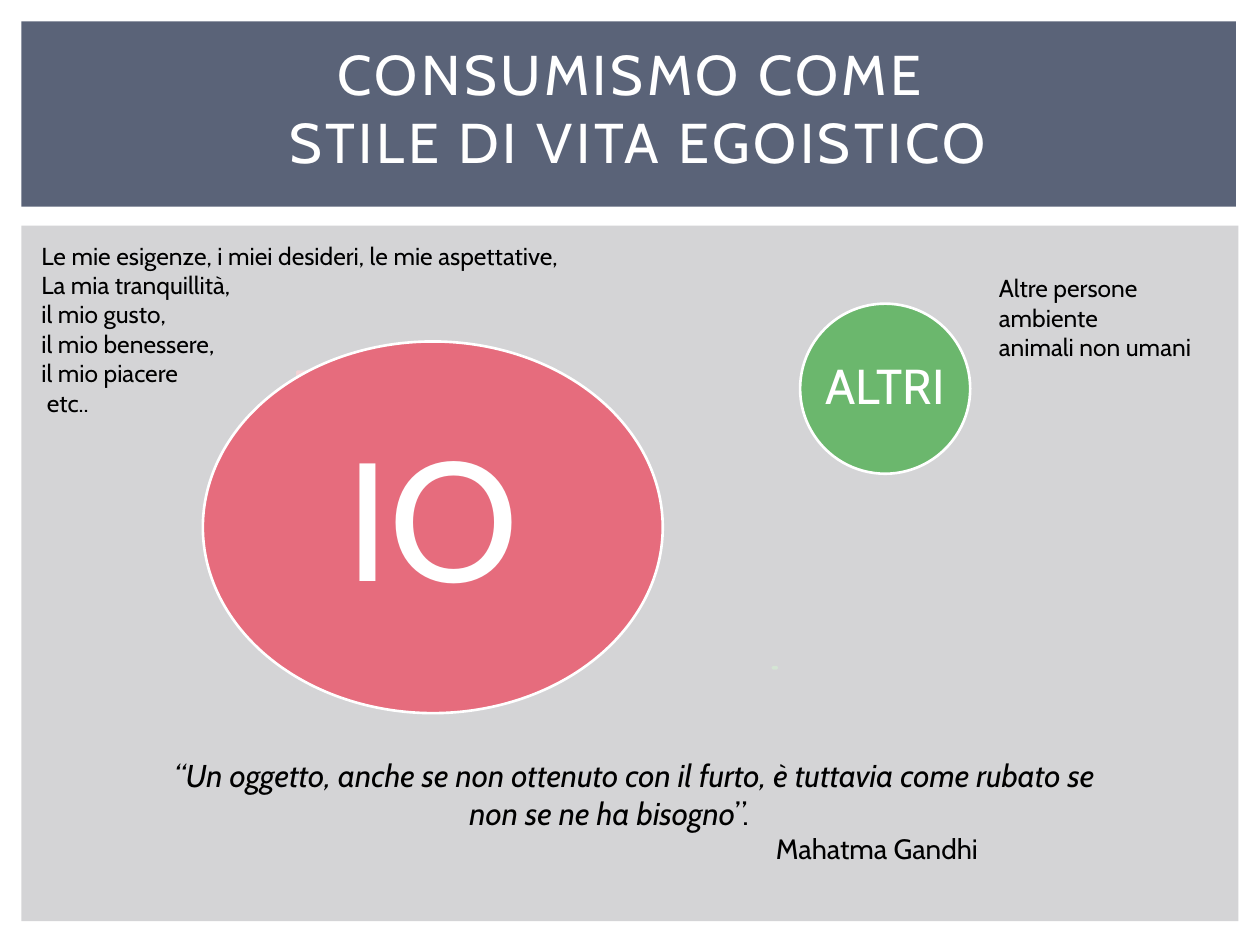
"""Build the slide on consumerism as a selfish way of life."""
from dataclasses import dataclass
from typing import Any

import lxml.etree
import pptx
import pptx.dml.color
import pptx.enum.shapes
import pptx.enum.text
import pptx.oxml.ns
import pptx.util

Inches = pptx.util.Inches
Kind = pptx.enum.shapes.MSO_SHAPE
Align = pptx.enum.text.PP_ALIGN
Anchor = pptx.enum.text.MSO_ANCHOR


@dataclass(frozen=True)
class Theme:
    """Colours, type sizes and the font of the slide."""
    font: str = "Cabin"
    white: str = "FFFFFF"
    black: str = "000000"
    panel: str = "D4D4D6"
    band: str = "5A6378"
    red: str = "E66C7D"
    pale_red: str = "F5D4D7"
    green: str = "6BB76D"
    pale_green: str = "D4E6D4"
    title: int = 32
    self_label: int = 96
    others_label: int = 28
    quote: int = 18
    author: int = 16
    note: int = 14
    outline: float = 1.5


@dataclass(frozen=True)
class Box:
    """A rectangle on the page in inches."""
    left: float
    top: float
    width: float
    height: float

    def lengths(self) -> list[int]:
        """Return the four lengths for a shape call."""
        return [Inches(n) for n in (self.left, self.top, self.width, self.height)]


@dataclass(frozen=True)
class Figure:
    """A filled shape with an optional outline and label."""
    kind: Any
    box: Box
    fill: str
    line: str = ""
    label: str = ""
    size: int = 0
    opacity: int = 100


@dataclass(frozen=True)
class Note:
    """A block of short left-aligned lines."""
    box: Box
    lines: tuple[str, ...]


THEME = Theme()
PANELS = (
    Figure(Kind.RECTANGLE, Box(0.17, 1.79, 9.66, 5.52), THEME.panel),
    Figure(Kind.RECTANGLE, Box(0.17, 0.17, 9.64, 1.47), THEME.band),
)
FIGURES = (
    Figure(Kind.RECTANGLE, Box(2.36, 2.95, 2.02, 1.35), THEME.pale_red,
           THEME.pale_red, opacity=90),
    Figure(Kind.OVAL, Box(1.61, 2.71, 3.65, 2.95), THEME.red, THEME.white,
           "IO", THEME.self_label),
    Figure(Kind.MATH_MINUS, Box(6.13, 5.28, 0.04, 0.04), THEME.pale_green,
           THEME.pale_green, opacity=90),
    Figure(Kind.OVAL, Box(6.35, 2.41, 1.35, 1.35), THEME.green, THEME.white,
           "ALTRI", THEME.others_label),
)
NOTES = (
    Note(Box(0.23, 1.86, 4.41, 1.75),
         ("Le mie esigenze, i miei desideri, le mie aspettative,",
          "La mia tranquillità,", "il mio gusto,", "il mio benessere,",
          "il mio piacere", " etc..")),
    Note(Box(7.83, 2.12, 2, 0.81),
         ("Altre persone", "ambiente", "animali non umani")),
)


def apply(target: Any, values: dict[str, Any]) -> None:
    """Set each named attribute on the target."""
    for name, value in values.items():
        setattr(target, name, value)


def add_span(para: Any, text: str, size: int, color: str = THEME.black,
             **extra: Any) -> Any:
    """Add a formatted run to a paragraph."""
    span = para.add_run()
    span.text = text
    apply(span.font, {"name": THEME.font, "size": pptx.util.Pt(size), **extra})
    span.font.color.rgb = pptx.dml.color.RGBColor.from_string(color)
    return span


def add_paras(frame: Any, count: int) -> list[Any]:
    """Return the given number of paragraphs of an empty frame."""
    return [frame.paragraphs[0], *(frame.add_paragraph() for _ in range(count - 1))]


def add_figure(page: Any, figure: Figure) -> Any:
    """Draw one figure with its label."""
    shape = page.shapes.add_shape(figure.kind, *figure.box.lengths())
    shape.shadow.inherit = False
    shape.fill.solid()
    shape.fill.fore_color.rgb = pptx.dml.color.RGBColor.from_string(figure.fill)
    if figure.line:
        shape.line.width = pptx.util.Pt(THEME.outline)
        shape.line.color.rgb = pptx.dml.color.RGBColor.from_string(figure.line)
    else:
        shape.line.fill.background()
    if figure.opacity < 100:
        for color in shape.element.spPr.iter(pptx.oxml.ns.qn("a:srgbClr")):
            alpha = lxml.etree.SubElement(color, pptx.oxml.ns.qn("a:alpha"))
            alpha.set("val", str(figure.opacity * 1000))
    if figure.label:
        frame = shape.text_frame
        apply(frame, {"word_wrap": False, "vertical_anchor": Anchor.MIDDLE,
                      "margin_left": 0, "margin_right": 0,
                      "margin_top": 0, "margin_bottom": 0})
        para = frame.paragraphs[0]
        apply(para, {"alignment": Align.CENTER, "line_spacing": 0.9})
        add_span(para, figure.label, figure.size, THEME.white)
    return shape


def add_text_box(page: Any, box: Box) -> Any:
    """Add a wrapping text box and return its frame."""
    frame = page.shapes.add_textbox(*box.lengths()).text_frame
    frame.word_wrap = True
    return frame


def add_note(page: Any, note: Note) -> None:
    """Write one block of lines."""
    frame = add_text_box(page, note.box)
    for para, line in zip(add_paras(frame, len(note.lines)), note.lines):
        add_span(para, line, THEME.note)


def add_title(page: Any, lines: tuple[str, ...]) -> None:
    """Fill the title placeholder with letter-spaced lines."""
    title = page.shapes.title
    left, top, width, height = Box(0, 0, 10, 1.7).lengths()
    apply(title, {"left": left, "top": top, "width": width, "height": height})
    frame = title.text_frame
    apply(frame, {"vertical_anchor": Anchor.MIDDLE,
                  "auto_size": pptx.enum.text.MSO_AUTO_SIZE.NONE})
    for para, line in zip(add_paras(frame, len(lines)), lines):
        para.alignment = Align.CENTER
        span = add_span(para, line, THEME.title, THEME.white)
        span.font._element.set("spc", "200")


def add_quote(page: Any) -> None:
    """Write the quotation and its author."""
    frame = add_text_box(page, Box(0.23, 5.95, 9.61, 1.01))
    first, second, author = add_paras(frame, 3)
    for para in (first, second):
        para.alignment = Align.CENTER
    add_span(first, "“Un oggetto, anche se non ottenuto con il furto, "
             "è tuttavia come rubato se", THEME.quote, italic=True)
    add_span(second, "non se ne ha bisogno", THEME.quote, italic=True)
    add_span(second, "”.", THEME.quote)
    second._p.get_or_add_pPr().set("marR", str(Inches(0.4)))
    add_span(author, "Mahatma Gandhi", THEME.author)
    author._p.get_or_add_pPr().set("marL", str(Inches(5.83)))


def main() -> None:
    """Build and save the deck."""
    deck = pptx.Presentation()
    apply(deck, {"slide_width": Inches(10), "slide_height": Inches(7.5)})
    page = deck.slides.add_slide(deck.slide_layouts[5])
    add_title(page, ("CONSUMISMO COME", " STILE DI VITA EGOISTICO"))
    for panel in PANELS:
        shape = add_figure(page, panel)
        page.shapes.title.element.addprevious(shape.element)
    add_quote(page)
    for figure in FIGURES:
        add_figure(page, figure)
    for note in NOTES:
        add_note(page, note)
    deck.save("out.pptx")


if __name__ == "__main__":
    main()
